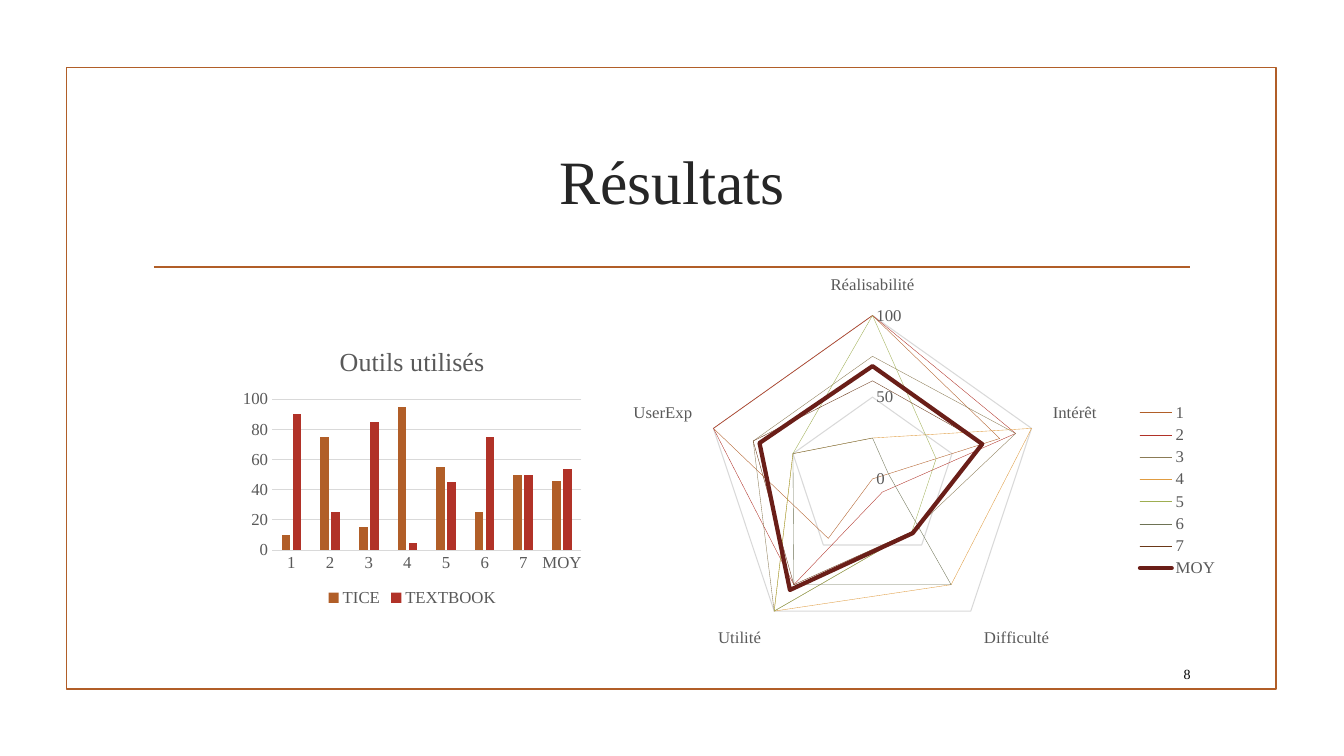
from collections import namedtuple

import pptx
import pptx.chart.data
import pptx.dml.color
import pptx.enum.chart
import pptx.enum.shapes
import pptx.enum.text
import pptx.oxml
import pptx.oxml.ns
import pptx.util

Pt = pptx.util.Pt
RGBColor = pptx.dml.color.RGBColor
ChartType = pptx.enum.chart.XL_CHART_TYPE
LegendPosition = pptx.enum.chart.XL_LEGEND_POSITION
Align = pptx.enum.text.PP_ALIGN
qn = pptx.oxml.ns.qn

RUST = RGBColor(0xB1, 0x5E, 0x28)
RED = RGBColor(0xB1, 0x32, 0x28)
TAUPE = RGBColor(0x8B, 0x7B, 0x56)
AMBER = RGBColor(0xE0, 0x9C, 0x41)
GREEN = RGBColor(0x9E, 0xAE, 0x51)
OLIVE = RGBColor(0x6E, 0x73, 0x55)
BROWN = RGBColor(0x6A, 0x38, 0x18)
MAROON = RGBColor(0x6A, 0x1E, 0x18)
INK = RGBColor(0x26, 0x26, 0x26)
BLACK = RGBColor(0, 0, 0)
GREY = RGBColor(0x59, 0x59, 0x59)
GRID = RGBColor(0xD9, 0xD9, 0xD9)
FONT = "Times New Roman"

TOOLS = ["1", "2", "3", "4", "5", "6", "7", "MOY"]
TOOL_SERIES = [
    ("TICE", [10, 75, 15, 95, 55, 25, 50, 46], RUST),
    ("TEXTBOOK", [90, 25, 85, 5, 45, 75, 50, 54], RED),
]
CRITERIA = ["Réalisabilité", "Intérêt", "Difficulté", "Utilité", "UserExp"]
RATING_SERIES = [
    ("1", [100, 80, 0, 45, 100], RUST),
    ("2", [100, 90, 10, 80, 100], RED),
    ("3", [75, 90, 40, 100, 75], TAUPE),
    ("4", [25, 100, 80, 100, 50], AMBER),
    ("5", [100, 40, 40, 100, 50], GREEN),
    ("6", [25, 10, 80, 80, 50], OLIVE),
    ("7", [60, 70, 40, 80, 75], BROWN),
    ("MOY", [69, 69, 41, 84, 71], MAROON),
]

Box = namedtuple("Box", "left top width height")


def points(box):
    return [Pt(length) for length in box]


def style_font(font, size, color):
    font.name = FONT
    font.size = Pt(size)
    font.bold = False
    font.color.rgb = color


def style_line(line, color, width):
    line.color.rgb = color
    line.width = Pt(width)


def write_line(shape, text, size, color, align):
    frame = shape.text_frame
    frame.word_wrap = True
    frame.vertical_anchor = pptx.enum.text.MSO_ANCHOR.MIDDLE
    para = frame.paragraphs[0]
    para.alignment = align
    span = para.add_run()
    span.text = text
    style_font(span.font, size, color)


def add_frame(page, box):
    """Border of the page with the rule under the title."""
    border = page.shapes.add_shape(
        pptx.enum.shapes.MSO_SHAPE.RECTANGLE, *points(box))
    border.shadow.inherit = False
    border.fill.background()
    style_line(border.line, RUST, 1.25)
    inset, drop = 62.5, 142.6
    rule = page.shapes.add_connector(
        pptx.enum.shapes.MSO_CONNECTOR.STRAIGHT,
        Pt(box.left + inset), Pt(box.top + drop),
        Pt(box.left + box.width - inset + 1), Pt(box.top + drop))
    style_line(rule.line, RUST, 1.25)
    rule._element.spPr.append(pptx.oxml.parse_xml(
        f"<a:effectLst {pptx.oxml.ns.nsdecls('a')}/>"))


def add_title(page, box):
    title = page.shapes.title
    title.left, title.top, title.width, title.height = points(box)
    write_line(title, "Résultats", 44, INK, Align.CENTER)


def add_page_number(page, box):
    number = page.shapes.add_textbox(*points(box))
    write_line(number, "8", 10, BLACK, Align.RIGHT)


def set_layout(element, index, sizes, inner=False):
    """Place a chart part by fractions (x, y, w, h) of the chart."""
    old = element.find(qn("c:layout"))
    if old is not None:
        element.remove(old)
    target = '<c:layoutTarget val="inner"/>' if inner else ""
    modes = "".join(f'<c:{axis}Mode val="edge"/>' for axis in "xy")
    values = "".join(f'<c:{name} val="{size}"/>'
                     for name, size in zip("xywh", sizes))
    element.insert(index, pptx.oxml.parse_xml(
        f"<c:layout {pptx.oxml.ns.nsdecls('c')}><c:manualLayout>"
        f"{target}{modes}{values}</c:manualLayout></c:layout>"))


def add_base_chart(page, box, kind, categories, series, step, legend_position):
    """Chart with the axes, grid and legend that both charts share."""
    data = pptx.chart.data.CategoryChartData(number_format="General")
    data.categories = categories
    for name, values, _ in series:
        data.add_series(name, values)
    chart = page.shapes.add_chart(kind, *points(box), data).chart
    style_font(chart.font, 10, BLACK)
    chart.has_title = False
    for axis in (chart.category_axis, chart.value_axis):
        axis.major_tick_mark = pptx.enum.chart.XL_TICK_MARK.NONE
        axis.minor_tick_mark = pptx.enum.chart.XL_TICK_MARK.NONE
        style_font(axis.tick_labels.font, 12, GREY)
    style_line(chart.category_axis.format.line, GRID, 0.75)
    scale = chart.value_axis
    scale.minimum_scale, scale.maximum_scale = 0, 100
    scale.major_unit = step
    scale.format.line.fill.background()
    style_line(scale.major_gridlines.format.line, GRID, 0.75)
    chart.has_legend = True
    chart.legend.position = legend_position
    chart.legend.include_in_layout = False
    style_font(chart.legend.font, 12, GREY)
    return chart


def add_tools_chart(page, box):
    chart = add_base_chart(page, box, ChartType.COLUMN_CLUSTERED, TOOLS,
                           TOOL_SERIES, 20, LegendPosition.BOTTOM)
    chart.has_title = True
    span = chart.chart_title.text_frame.paragraphs[0].add_run()
    span.text = "Outils utilisés"
    style_font(span.font, 18.6, GREY)
    chart.chart_title.include_in_layout = False
    plot = chart.plots[0]
    plot.vary_by_categories = False
    plot.gap_width, plot.overlap = 219, -27
    for bars, (_, _, color) in zip(plot.series, TOOL_SERIES):
        bars.format.fill.solid()
        bars.format.fill.fore_color.rgb = color


def add_ratings_chart(page, box):
    chart = add_base_chart(page, box, ChartType.RADAR, CRITERIA,
                           RATING_SERIES, 50, LegendPosition.RIGHT)
    plot = chart.plots[0]
    plot.vary_by_categories = False
    style_line(chart.category_axis.major_gridlines.format.line, GRID, 0.75)
    for ring, (name, _, color) in zip(plot.series, RATING_SERIES):
        line = ring.format.line
        style_line(line, color, 3 if name == "MOY" else 0.25)
        ring._element.spPr.find(qn("a:ln")).set("cap", "rnd")
        ring.smooth = False
    plot_area = chart._chartSpace.chart.plotArea
    set_layout(plot_area, 0, (0.22, 0.08, 0.5, 0.86), inner=True)
    set_layout(chart.legend._element, 1, (0.86, 0.3, 0.13, 0.48))


def main():
    deck = pptx.Presentation()
    deck.slide_width, deck.slide_height = Pt(960), Pt(540)
    page = deck.slides.add_slide(deck.slide_layouts[5])
    add_frame(page, Box(47.5, 48.2, 864, 444.2))
    add_title(page, Box(102.2, 77, 756, 103))
    add_tools_chart(page, Box(168.5, 235.4, 252, 200.9))
    add_ratings_chart(page, Box(398.2, 197.3, 478.8, 277.9))
    add_page_number(page, Box(815, 470.2, 42.5, 22.3))
    deck.save("out.pptx")


if __name__ == "__main__":
    main()
